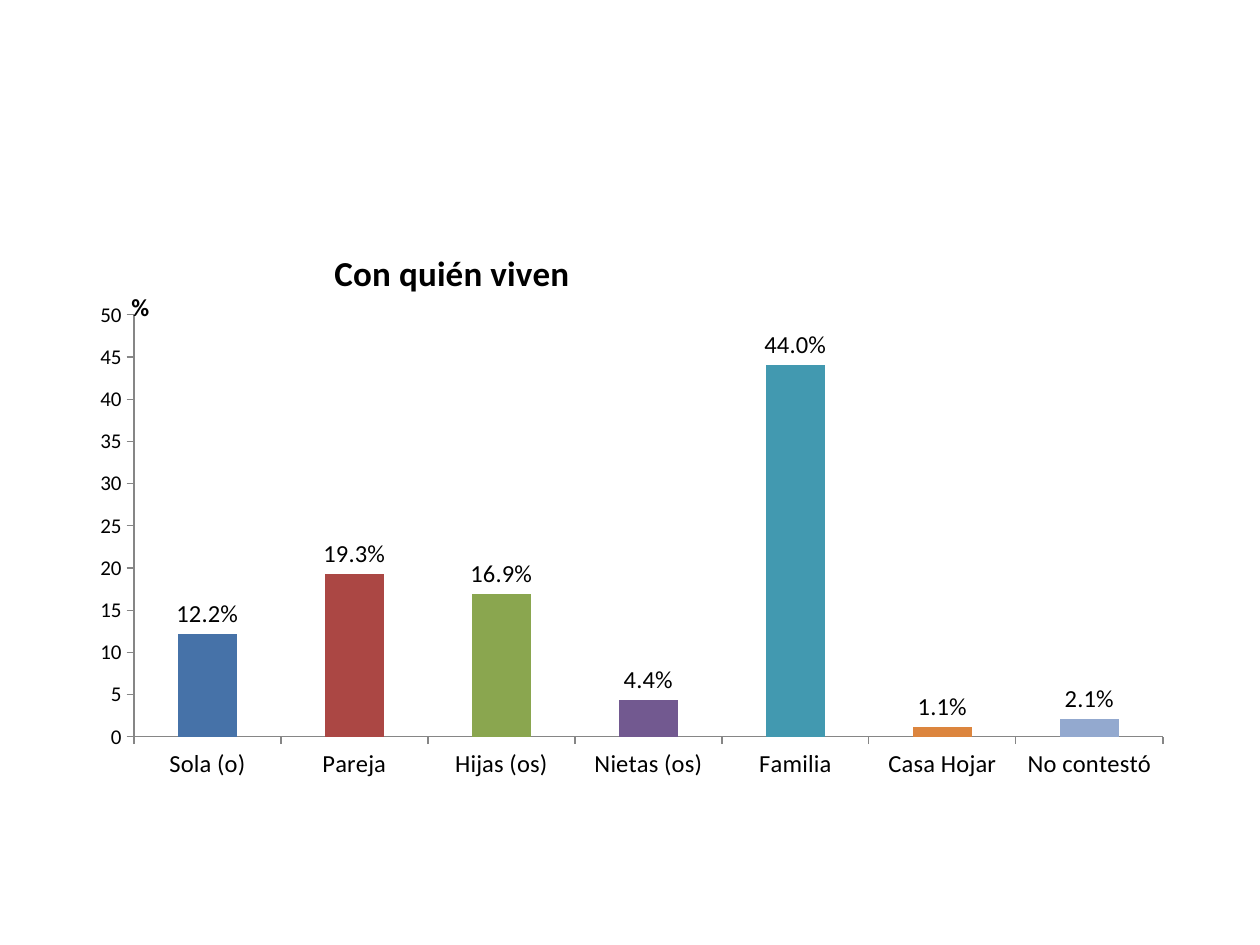
"""Build a slide with a column chart of the people respondents live with."""
from dataclasses import dataclass
from typing import Optional

from lxml.etree import SubElement
from pptx import Presentation
from pptx.chart.data import CategoryChartData
from pptx.dml.color import RGBColor
from pptx.enum.chart import XL_CHART_TYPE, XL_LABEL_POSITION, XL_TICK_MARK
from pptx.oxml import parse_xml
from pptx.oxml.ns import nsdecls, qn
from pptx.util import Emu, Pt

EMU_PER_PX = 914400 / 126
FONT = "Calibri"
COLORS = {
    "text": "000000",
    "axis": "868686",
    "blue": "4672A8",
    "red": "AB4744",
    "green": "8AA64F",
    "purple": "725990",
    "teal": "4299B0",
    "orange": "DC853E",
    "light_blue": "93A9CF",
}


@dataclass(frozen=True)
class Household:
    name: str
    percent: float
    color: str


@dataclass(frozen=True)
class Box:
    left: int
    top: int
    width: Optional[int] = None
    height: Optional[int] = None


HOUSEHOLDS = [
    Household("Sola (o)", 12.2, "blue"),
    Household("Pareja", 19.3, "red"),
    Household("Hijas (os)", 16.9, "green"),
    Household("Nietas (os)", 4.4, "purple"),
    Household("Familia", 44.0, "teal"),
    Household("Casa Hojar", 1.1, "orange"),
    Household("No contestó", 2.1, "light_blue"),
]
CHART = Box(63, 220, 1134, 624)
PLOT = Box(134, 315, 1029, 422)
TITLE = Box(328, 242)
UNIT = Box(127, 285)


def px(length: int) -> Emu:
    """Turn pixels into EMU."""
    return Emu(round(length * EMU_PER_PX))


def rgb(name: str) -> RGBColor:
    """Look up a named colour."""
    return RGBColor.from_string(COLORS[name])


def format_font(font, size: int, bold: bool = False) -> None:
    """Give a font the chart's face and colour."""
    font.name = FONT
    font.size = Pt(size)
    font.bold = bold
    font.color.rgb = rgb("text")


def make_layout(box: Box):
    """Describe a slide position as fractions of the chart area."""
    layout = parse_xml(f"<c:layout {nsdecls('c')}><c:manualLayout/></c:layout>")
    fractions = {
        "x": (box.left - CHART.left) / CHART.width,
        "y": (box.top - CHART.top) / CHART.height,
    }
    settings = {"xMode": "edge", "yMode": "edge"}
    if box.width and box.height:
        settings = {"layoutTarget": "inner", **settings}
        fractions["w"] = box.width / CHART.width
        fractions["h"] = box.height / CHART.height
    settings.update({key: f"{value:.4f}" for key, value in fractions.items()})
    for key, value in settings.items():
        SubElement(layout[0], qn(f"c:{key}")).set("val", value)
    return layout


def place(parent, box: Box, index: int) -> None:
    """Replace the layout of a chart part."""
    for old in parent.findall(qn("c:layout")):
        parent.remove(old)
    parent.insert(index, make_layout(box))


def set_title(title, text: str, size: int, box: Box) -> None:
    """Write, format and place a chart or axis title."""
    title.text_frame.text = text
    format_font(title.text_frame.paragraphs[0].runs[0].font, size, bold=True)
    body = title.text_frame._txBody.find(qn("a:bodyPr"))
    body.set("rot", "0")
    body.set("vert", "horz")
    place(title._element, box, 1)


def format_axis(axis, size: int) -> None:
    """Style an axis without gridlines."""
    axis.has_major_gridlines = False
    axis.major_tick_mark = XL_TICK_MARK.OUTSIDE
    axis.minor_tick_mark = XL_TICK_MARK.NONE
    axis.format.line.color.rgb = rgb("axis")
    axis.format.line.width = Pt(0.75)
    format_font(axis.tick_labels.font, size)


def add_household_chart(slide) -> None:
    """Add the column chart with one colour for each household."""
    shares = CategoryChartData(number_format="0.0")
    shares.categories = [household.name for household in HOUSEHOLDS]
    shares.add_series("Series 1", [household.percent for household in HOUSEHOLDS])
    chart = slide.shapes.add_chart(
        XL_CHART_TYPE.COLUMN_CLUSTERED,
        px(CHART.left), px(CHART.top), px(CHART.width), px(CHART.height),
        shares,
    ).chart
    format_font(chart.font, 10)
    chart.has_legend = False
    chart.has_title = True
    set_title(chart.chart_title, "Con quién viven", 20, TITLE)
    place(chart._chartSpace.chart.plotArea, PLOT, 0)

    format_axis(chart.category_axis, 14)
    percent_axis = chart.value_axis
    format_axis(percent_axis, 12)
    percent_axis.minimum_scale = 0
    percent_axis.maximum_scale = 50
    percent_axis.major_unit = 5
    percent_axis.tick_labels.number_format = "0"
    percent_axis.tick_labels.number_format_is_linked = False
    set_title(percent_axis.axis_title, "%", 14, UNIT)

    columns = chart.plots[0]
    columns.gap_width = 150
    columns.vary_by_categories = False
    columns.has_data_labels = True
    labels = columns.data_labels
    labels.show_value = True
    labels.number_format = '0.0"%"'
    labels.number_format_is_linked = False
    labels.position = XL_LABEL_POSITION.OUTSIDE_END
    format_font(labels.font, 14)
    for index, household in enumerate(HOUSEHOLDS):
        fill = columns.series[0].points[index].format.fill
        fill.solid()
        fill.fore_color.rgb = rgb(household.color)


def main() -> None:
    """Create and save the presentation."""
    presentation = Presentation()
    presentation.slide_width = px(1260)
    presentation.slide_height = px(945)
    slide = presentation.slides.add_slide(presentation.slide_layouts[6])
    add_household_chart(slide)
    presentation.save("out.pptx")


if __name__ == "__main__":
    main()
